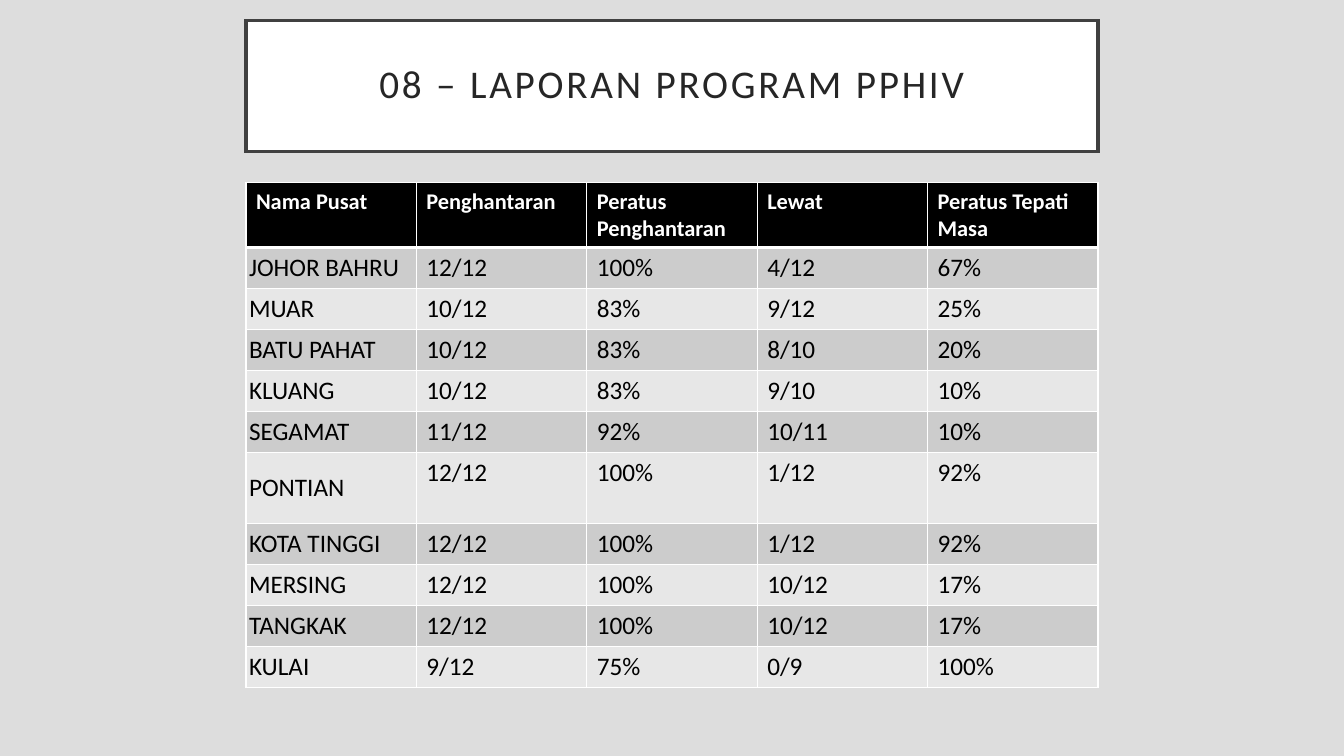
import dataclasses

import lxml.etree
import pptx
import pptx.dml.color
import pptx.enum.shapes
import pptx.enum.text
import pptx.oxml.ns
import pptx.util

Pt = pptx.util.Pt
qn = pptx.oxml.ns.qn
MIDDLE = pptx.enum.text.MSO_ANCHOR.MIDDLE


@dataclasses.dataclass(frozen=True)
class Theme:
    """Colours, font and type sizes of the slide."""
    font: str = "Calibri"
    background: str = "DDDDDD"
    white: str = "FFFFFF"
    frame: str = "404040"
    title: str = "262626"
    black: str = "000000"
    bands: tuple = ("CCCCCC", "E7E7E7")
    title_size: float = 28
    header_size: float = 16
    body_size: float = 18


THEME = Theme()

HEADERS = ["Nama Pusat", "Penghantaran", "Peratus Penghantaran", "Lewat", "Peratus Tepati Masa"]
CENTRES = [
    ("JOHOR BAHRU", "12/12", "100%", "4/12", "67%"),
    ("MUAR", "10/12", "83%", "9/12", "25%"),
    ("BATU PAHAT", "10/12", "83%", "8/10", "20%"),
    ("KLUANG", "10/12", "83%", "9/10", "10%"),
    ("SEGAMAT", "11/12", "92%", "10/11", "10%"),
    ("PONTIAN", "12/12", "100%", "1/12", "92%"),
    ("KOTA TINGGI", "12/12", "100%", "1/12", "92%"),
    ("MERSING", "12/12", "100%", "10/12", "17%"),
    ("TANGKAK", "12/12", "100%", "10/12", "17%"),
    ("KULAI", "9/12", "75%", "0/9", "100%"),
]
HEADER_HEIGHT, ROW_HEIGHT, TALL_HEIGHT = 46.4, 29.3, 50.7
TALL_CENTRE = "PONTIAN"


def rgb(value):
    """Return the colour object for a hex string."""
    return pptx.dml.color.RGBColor.from_string(value)


def set_text(tf, text, size, color, bold=False, align=None, line_spacing=None, spacing=None):
    """Write one formatted paragraph into a text frame."""
    tf.word_wrap = True
    p = tf.paragraphs[0]
    if align is not None:
        p.alignment = align
    if line_spacing is not None:
        p.line_spacing = line_spacing
    r = p.add_run()
    r.text = text
    r.font.name = THEME.font
    r.font.size = Pt(size)
    r.font.bold = bold
    r.font.color.rgb = rgb(color)
    if spacing is not None:
        r.font._element.set("spc", str(int(spacing * 100)))


def set_borders(cell, bottom=1):
    """Draw white borders on all four sides of a cell."""
    tcPr = cell._tc.get_or_add_tcPr()
    widths = {"a:lnL": 1, "a:lnR": 1, "a:lnT": 1, "a:lnB": bottom}
    for i, (tag, width) in enumerate(widths.items()):
        ln = lxml.etree.Element(qn(tag), w=str(Pt(width)))
        fill = lxml.etree.SubElement(ln, qn("a:solidFill"))
        lxml.etree.SubElement(fill, qn("a:srgbClr"), val=THEME.white)
        tcPr.insert(i, ln)


def fill_cell(cell, text, fill, size, color, bold=False, bottom=1):
    """Give a cell its text, fill and borders."""
    set_text(cell.text_frame, text, size, color, bold=bold)
    cell.fill.solid()
    cell.fill.fore_color.rgb = rgb(fill)
    set_borders(cell, bottom)


def add_title(s, text, left, top, width, height):
    """Place the framed title in its box."""
    sp = s.shapes.add_shape(pptx.enum.shapes.MSO_SHAPE.RECTANGLE,
                            Pt(left), Pt(top), Pt(width), Pt(height))
    sp.shadow.inherit = False
    sp.fill.solid()
    sp.fill.fore_color.rgb = rgb(THEME.white)
    sp.line.color.rgb = rgb(THEME.frame)
    sp.line.width = Pt(2.5)
    ln = sp._element.spPr.find(qn("a:ln"))
    lxml.etree.SubElement(ln, qn("a:miter"), lim="800000")
    tf = sp.text_frame
    tf.vertical_anchor = MIDDLE
    tf.margin_left = tf.margin_right = tf.margin_top = tf.margin_bottom = Pt(14.4)
    set_text(tf, text, THEME.title_size, THEME.title, spacing=2, line_spacing=0.9,
             align=pptx.enum.text.PP_ALIGN.CENTER)


def add_report_table(s, left, top, width):
    """Place the table of centres, with equal columns across its width."""
    heights = [HEADER_HEIGHT] + [TALL_HEIGHT if row[0] == TALL_CENTRE else ROW_HEIGHT
                                 for row in CENTRES]
    table = s.shapes.add_table(len(heights), len(HEADERS), Pt(left), Pt(top),
                               Pt(width), Pt(sum(heights))).table
    for column in table.columns:
        column.width = Pt(width / len(HEADERS))
    for row, height in zip(table.rows, heights):
        row.height = Pt(height)
    for j, text in enumerate(HEADERS):
        fill_cell(table.cell(0, j), text, THEME.black, THEME.header_size, THEME.white,
                  bold=True, bottom=3)
    for i, values in enumerate(CENTRES):
        for j, text in enumerate(values):
            fill_cell(table.cell(i + 1, j), text, THEME.bands[i % 2], THEME.body_size,
                      THEME.black)
        name = table.cell(i + 1, 0)
        name.vertical_anchor = MIDDLE
        name.margin_left = name.margin_right = Pt(2.2)
        name.margin_top = name.margin_bottom = 0


def add_report_slide(prs):
    """Build the report slide: title above table in one shared column."""
    s = prs.slides.add_slide(prs.slide_layouts[6])
    s.background.fill.solid()
    s.background.fill.fore_color.rgb = rgb(THEME.background)
    left, width = 175.7, 608.6
    add_title(s, "08 – LAPORAN PROGRAM PPHIV", left, 14.6, width, 93.6)
    add_report_table(s, left, 130.5, width)


def main():
    """Create and save the presentation."""
    prs = pptx.Presentation()
    prs.slide_width, prs.slide_height = Pt(960), Pt(540)
    add_report_slide(prs)
    prs.save("out.pptx")


if __name__ == "__main__":
    main()
